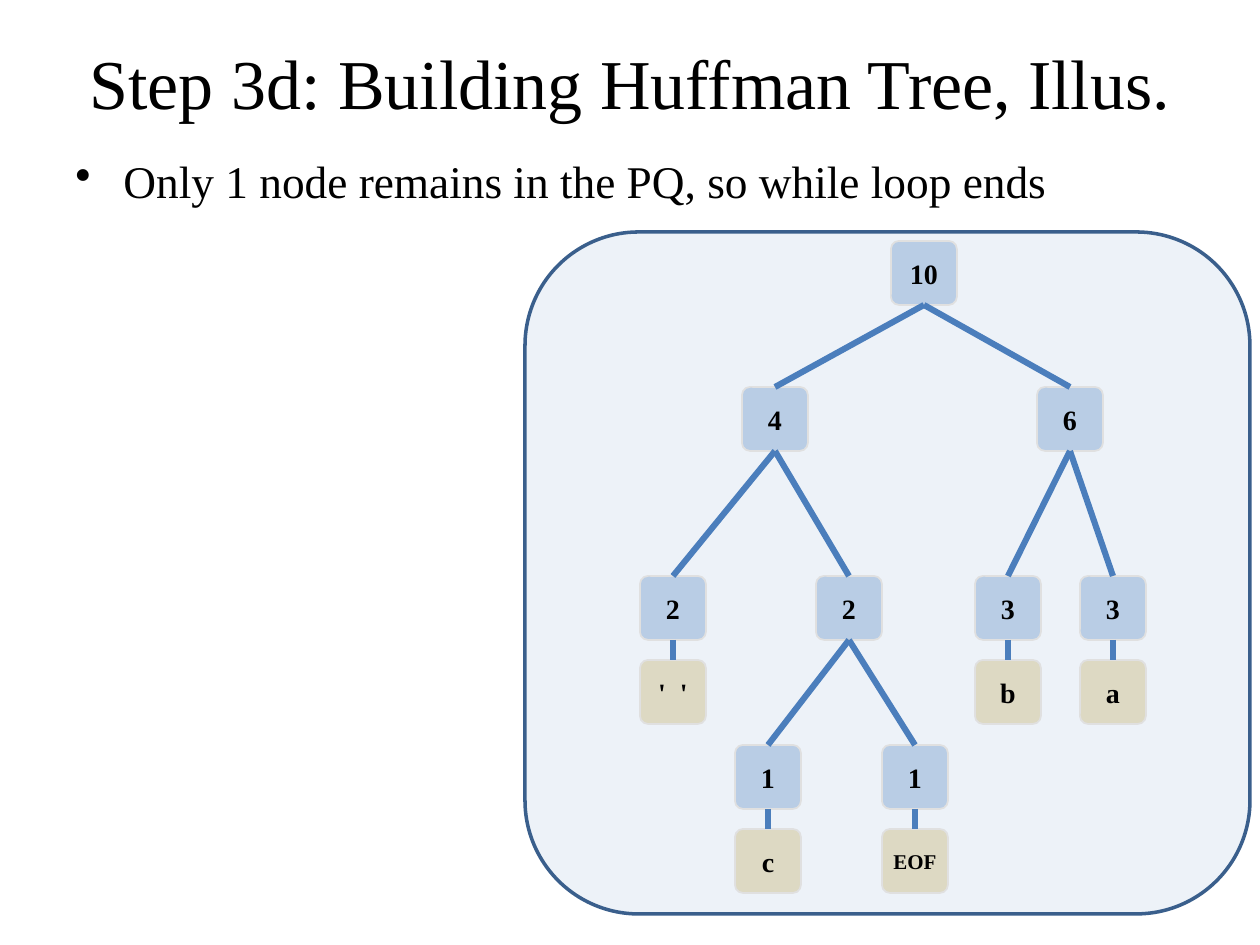
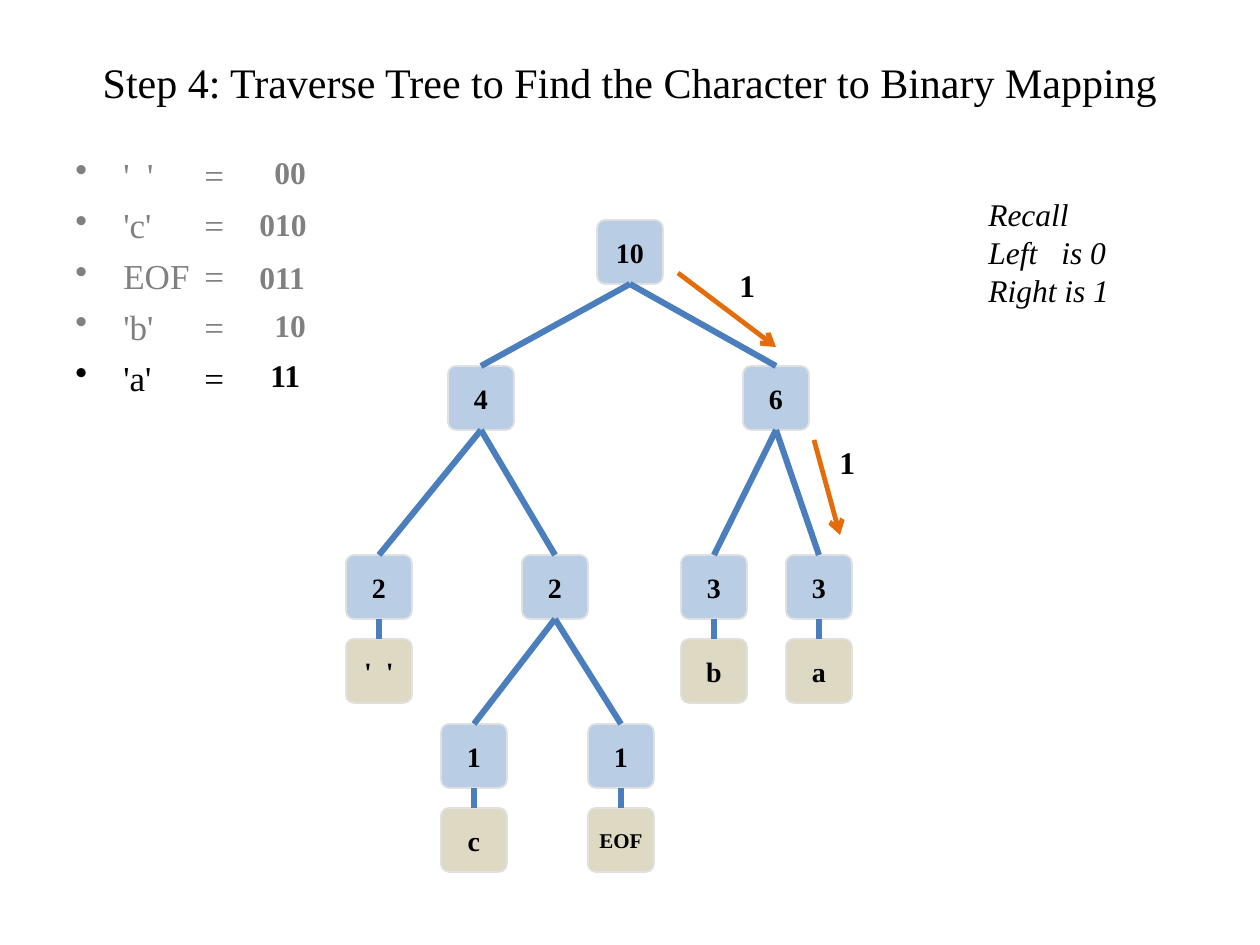
from lxml.etree import SubElement
from pptx import Presentation
from pptx.dml.color import RGBColor
from pptx.enum.shapes import MSO_CONNECTOR as CONN, MSO_SHAPE as SHAPE
from pptx.enum.text import MSO_ANCHOR as ANCHOR, PP_ALIGN as ALIGN
from pptx.oxml.ns import qn
from pptx.util import Emu, Inches, Pt

BLACK = RGBColor(0x00, 0x00, 0x00)
GRAY = RGBColor(0x80, 0x80, 0x80)
NODE_BLUE = RGBColor(0xB9, 0xCD, 0xE5)
LEAF_TAN = RGBColor(0xDD, 0xD9, 0xC3)
NODE_EDGE = RGBColor(0xE0, 0xE0, 0xE0)
BRANCH_BLUE = RGBColor(0x4B, 0x7E, 0xBC)
STEP_ORANGE = RGBColor(0xE4, 0x6C, 0x0A)
PANEL_FILL = RGBColor(0x4F, 0x81, 0xBD)
PANEL_EDGE = RGBColor(0x3A, 0x5F, 0x8C)

FONT = "Times New Roman"
NODE_W, NODE_H = 66, 64
LEVEL_TOPS = (0, 146, 335, 504)
LEAF_DROP = 84
BULLET_INDENT = 48

HUFFMAN_TREE = ("10", 251, [
    ("4", 102, [
        ("2", 0, "'  '"),
        ("2", 176, [("1", 95, "c"), ("1", 242, "EOF")]),
    ]),
    ("6", 397, [("3", 335, "b"), ("3", 440, "a")]),
])
CODES = [
    ("'  '", "00", 262, 147, GRAY),
    ("'c'", "010", 247, 199, GRAY),
    ("EOF", "011", 247, 252, GRAY),
    ("'b'", "10", 262, 300, GRAY),
    ("'a'", "11", 258, 350, BLACK),
]
STEPS = [
    ((678, 273), (776, 347), (727, 260)),
    ((814, 440), (840, 535), (827, 437)),
]


def px(n):
    return Emu(round(n * Inches(1) / 126))


def add_text(tf, text, size=18, color=BLACK, bold=False, italic=False,
             align=ALIGN.LEFT, bullet=False, tab=None, first=True):
    p = tf.paragraphs[0] if first else tf.add_paragraph()
    p.alignment = align
    r = p.add_run()
    r.text = text
    f = r.font
    f.name, f.size, f.bold, f.italic = FONT, Pt(size), bold, italic
    f.color.rgb = color
    pPr = p._p.get_or_add_pPr()
    if bullet:
        p.space_before = Pt(5)
        pPr.set("marL", str(px(BULLET_INDENT)))
        pPr.set("indent", str(-px(BULLET_INDENT)))
        SubElement(pPr, qn("a:buChar"), char="•")
    if tab:
        tabs = SubElement(pPr, qn("a:tabLst"))
        SubElement(tabs, qn("a:tab"), pos=str(px(tab)), algn="l")


def add_box(slide, x, y, w, h, wrap=False, anchor=ANCHOR.TOP):
    tf = slide.shapes.add_textbox(px(x), px(y), px(w), px(h)).text_frame
    tf.word_wrap = wrap
    tf.vertical_anchor = anchor
    return tf


def add_round_rect(slide, x, y, w, h, fill, edge, width):
    s = slide.shapes.add_shape(SHAPE.ROUNDED_RECTANGLE,
                               px(x), px(y), px(w), px(h))
    s.shadow.inherit = False
    s.fill.solid()
    s.fill.fore_color.rgb = fill
    s.line.color.rgb = edge
    s.line.width = Pt(width)
    return s


def add_line(slide, start, end, color, width, arrow=False):
    c = slide.shapes.add_connector(CONN.STRAIGHT, *map(px, start + end))
    c.line.color.rgb = color
    c.line.width = Pt(width)
    if arrow:
        SubElement(c.line._get_or_add_ln(), qn("a:tailEnd"), type="arrow")
    SubElement(c._element.spPr, qn("a:effectLst"))
    return c


def add_title(slide, text, size):
    tf = add_box(slide, 63, 38, 1134, 88, wrap=True, anchor=ANCHOR.MIDDLE)
    add_text(tf, text, size=size, align=ALIGN.CENTER)


def add_node(slide, x, y, label, fill):
    s = add_round_rect(slide, x, y, NODE_W, NODE_H, fill, NODE_EDGE, 1)
    s.adjustments[0] = 0.126
    tf = s.text_frame
    tf.word_wrap = False
    tf.vertical_anchor = ANCHOR.MIDDLE
    add_text(tf, label, size=12 if len(label) > 2 and label.isalpha() else 16,
             bold=True, align=ALIGN.CENTER)
    return s


def add_branch(slide, parent, child):
    c = add_line(slide, (0, 0), (0, 0), BRANCH_BLUE, 3.5)
    c.begin_connect(parent, 2)
    c.end_connect(child, 0)


def add_tree(slide, left, top, tree, level=0):
    label, x, below = tree
    y = top + LEVEL_TOPS[level]
    node = add_node(slide, left + x, y, label, NODE_BLUE)
    if isinstance(below, str):
        children = [add_node(slide, left + x, y + LEAF_DROP, below, LEAF_TAN)]
    else:
        children = [add_tree(slide, left, top, t, level + 1) for t in below]
    for child in children:
        add_branch(slide, node, child)
    return node


def add_panel(slide, x, y, w, h):
    s = add_round_rect(slide, x, y, w, h, PANEL_FILL, PANEL_EDGE, 2)
    color = s._element.spPr.find(".//" + qn("a:srgbClr"))
    SubElement(color, qn("a:alpha"), val="10000")


def add_code_list(slide, x, y, w, h):
    tf = add_box(slide, x, y, w, h, wrap=True)
    for i, (char, code, code_x, code_y, color) in enumerate(CODES):
        add_text(tf, char + "\t=", size=20, color=color, bullet=True,
                 tab=129, first=i == 0)
        add_text(add_box(slide, code_x, code_y, 73, 50), code,
                 color=color, bold=True)


def add_recall(slide, x, y, w, h):
    tf = add_box(slide, x, y, w, h)
    for i, text in enumerate(("Recall", "Left\tis 0", "Right is 1")):
        add_text(tf, text, italic=True, tab=73, first=i == 0)


def add_steps(slide):
    for start, end, label_at in STEPS:
        add_line(slide, start, end, STEP_ORANGE, 2.75, arrow=True)
        add_text(add_box(slide, *label_at, 42, 50), "1", bold=True)


def build_finished_tree(slide):
    add_panel(slide, 525, 232, 725, 682)
    add_title(slide, "Step 3d: Building Huffman Tree, Illus.", 40)
    add_text(add_box(slide, 63, 147, 1134, 63, wrap=True),
             "Only 1 node remains in the PQ, so while loop ends",
             size=25.9, bullet=True)
    add_tree(slide, 640, 241, HUFFMAN_TREE)


def build_traversal(slide):
    add_title(slide, "Step 4: Traverse Tree to Find the Character "
                     "to Binary Mapping", 24)
    add_code_list(slide, 63, 147, 316, 284)
    add_tree(slide, 346, 220, HUFFMAN_TREE)
    add_recall(slide, 976, 189, 149, 127)
    add_steps(slide)


def main():
    prs = Presentation()
    prs.slide_width, prs.slide_height = Inches(10), Inches(7.5)
    for build in (build_finished_tree, build_traversal):
        build(prs.slides.add_slide(prs.slide_layouts[6]))
    prs.save("out.pptx")


if __name__ == "__main__":
    main()
